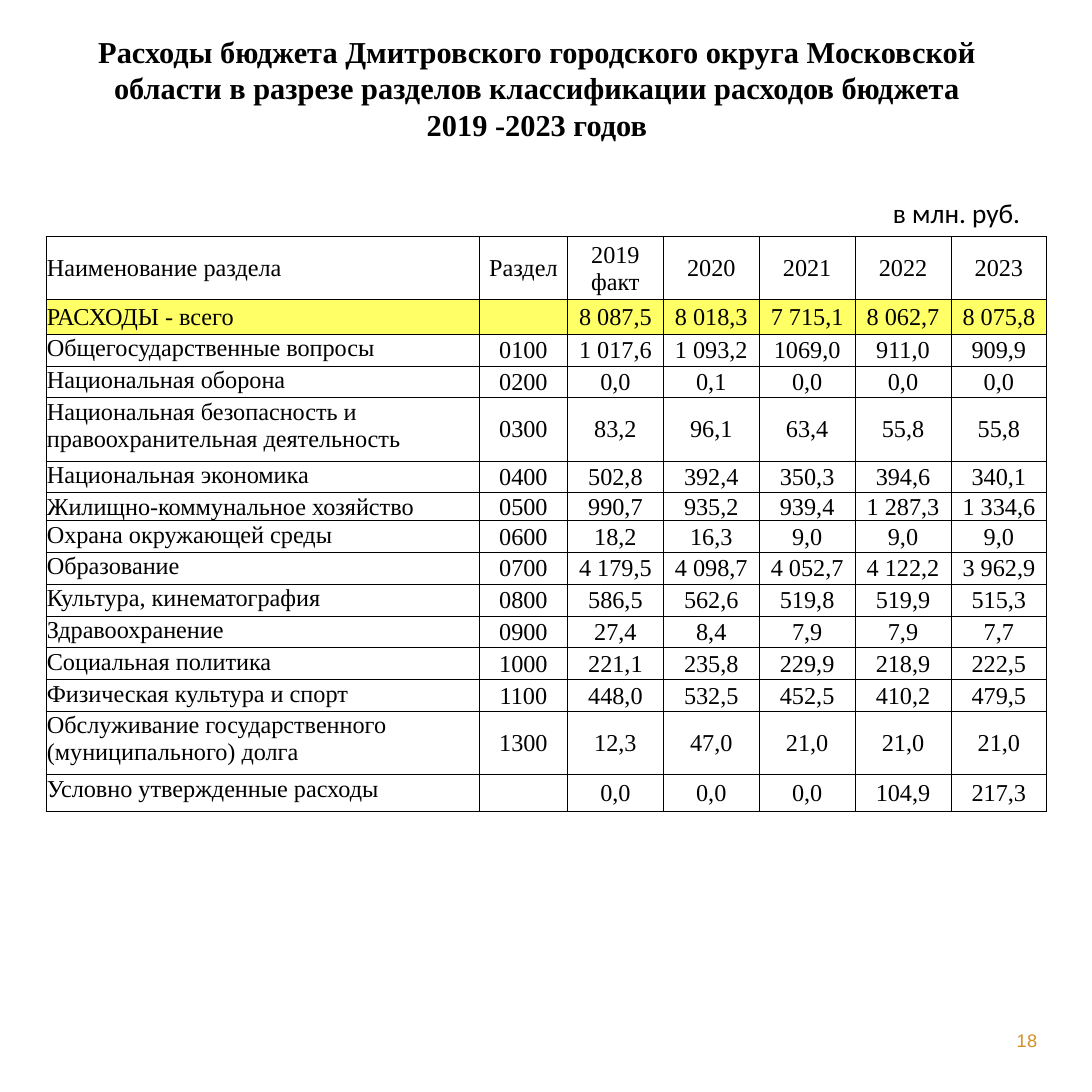
from lxml.etree import SubElement
from pptx import Presentation
from pptx.dml.color import RGBColor
from pptx.enum.text import MSO_ANCHOR as Anchor, MSO_AUTO_SIZE as AutoSize, PP_ALIGN as Align
from pptx.oxml.ns import qn
from pptx.util import Cm, Pt

BLACK = RGBColor(0x00, 0x00, 0x00)
YELLOW = RGBColor(0xFF, 0xFF, 0x66)
OCHRE = RGBColor(0xD2, 0x8E, 0x27)
SERIF = "Times New Roman"

TITLE_LINES = [
    "Расходы бюджета Дмитровского городского округа Московской области "
    "в разрезе разделов классификации расходов бюджета",
    "2019 -2023 годов",
]
COLUMN_WIDTHS = [10.08, 2.05] + [2.23] * 5
ROW_HEIGHT = 0.74
SPECIAL_HEIGHTS = {0: 1.47, 1: 0.8, 4: 1.47, 6: 0.62, 13: 1.47, 14: 0.86}
HEADER_ROW, TOTAL_ROW = 0, 1
EXPENSES = [
    ["Наименование раздела", "Раздел", "2019\nфакт", "2020", "2021", "2022", "2023"],
    ["РАСХОДЫ - всего", "", "8 087,5", "8 018,3", "7 715,1", "8 062,7", "8 075,8"],
    ["Общегосударственные вопросы", "0100", "1 017,6", "1 093,2", "1069,0", "911,0", "909,9"],
    ["Национальная оборона", "0200", "0,0", "0,1", "0,0", "0,0", "0,0"],
    ["Национальная безопасность и правоохранительная деятельность", "0300",
     "83,2", "96,1", "63,4", "55,8", "55,8"],
    ["Национальная экономика", "0400", "502,8", "392,4", "350,3", "394,6", "340,1"],
    ["Жилищно-коммунальное хозяйство", "0500", "990,7", "935,2", "939,4", "1 287,3", "1 334,6"],
    ["Охрана окружающей среды", "0600", "18,2", "16,3", "9,0", "9,0", "9,0"],
    ["Образование", "0700", "4 179,5", "4 098,7", "4 052,7", "4 122,2", "3 962,9"],
    ["Культура, кинематография", "0800", "586,5", "562,6", "519,8", "519,9", "515,3"],
    ["Здравоохранение", "0900", "27,4", "8,4", "7,9", "7,9", "7,7"],
    ["Социальная политика", "1000", "221,1", "235,8", "229,9", "218,9", "222,5"],
    ["Физическая культура и спорт", "1100", "448,0", "532,5", "452,5", "410,2", "479,5"],
    ["Обслуживание государственного (муниципального) долга", "1300",
     "12,3", "47,0", "21,0", "21,0", "21,0"],
    ["Условно утвержденные расходы", "", "0,0", "0,0", "0,0", "104,9", "217,3"],
]


def write_lines(text_frame, lines, font_name, size, color=BLACK, align=Align.LEFT, bold=False):
    """Put each line in its own paragraph and return the last run."""
    for index, line in enumerate(lines):
        paragraph = text_frame.add_paragraph() if index else text_frame.paragraphs[0]
        paragraph.alignment = align
        run = paragraph.add_run()
        run.text = line
        run.font.name = font_name
        run.font.size = Pt(size)
        run.font.bold = bold
        run.font.color.rgb = color
    return run


def add_title(slide, left, top, width, height):
    title = slide.shapes.title
    title.left, title.top, title.width, title.height = left, top, width, height
    text_frame = title.text_frame
    text_frame.word_wrap = True
    text_frame.auto_size = AutoSize.NONE
    text_frame.vertical_anchor = Anchor.TOP
    write_lines(text_frame, TITLE_LINES, SERIF, 20, align=Align.CENTER, bold=True)


def add_unit_note(slide, left, top, width, height):
    text_frame = slide.shapes.add_textbox(left, top, width, height).text_frame
    text_frame.word_wrap = True
    write_lines(text_frame, ["в млн. руб."], "Calibri", 18)


def add_page_number(slide, left, top, width, height):
    text_frame = slide.shapes.add_textbox(left, top, width, height).text_frame
    text_frame.word_wrap = True
    text_frame.vertical_anchor = Anchor.MIDDLE
    text_frame.margin_left = text_frame.margin_right = 0
    text_frame.margin_top = text_frame.margin_bottom = 0
    run = write_lines(text_frame, ["18"], "Arial", 12, OCHRE, Align.RIGHT)
    run.font._element.set("spc", "30")


def add_borders(cell):
    properties = cell._tc.get_or_add_tcPr()
    for side in ("a:lnL", "a:lnR", "a:lnT", "a:lnB"):
        line = SubElement(properties, qn(side), w=str(Pt(0.5)))
        fill = SubElement(line, qn("a:solidFill"))
        SubElement(fill, qn("a:srgbClr"), val=str(BLACK))


def fill_cell(cell, text, row, column):
    is_name = column == 0
    cell.margin_left = cell.margin_right = cell.margin_top = Cm(0.02)
    cell.margin_bottom = 0
    top_aligned = is_name and row not in (HEADER_ROW, TOTAL_ROW)
    cell.vertical_anchor = Anchor.TOP if top_aligned else Anchor.MIDDLE
    add_borders(cell)
    if row == TOTAL_ROW:
        cell.fill.solid()
        cell.fill.fore_color.rgb = YELLOW
    else:
        cell.fill.background()
    align = Align.LEFT if is_name else Align.CENTER
    write_lines(cell.text_frame, text.split("\n"), SERIF, 16, align=align)


def add_expense_table(slide, left, top):
    heights = [SPECIAL_HEIGHTS.get(row, ROW_HEIGHT) for row in range(len(EXPENSES))]
    table = slide.shapes.add_table(
        len(heights), len(COLUMN_WIDTHS), left, top, Cm(sum(COLUMN_WIDTHS)), Cm(sum(heights))
    ).table
    table.first_row = table.horz_banding = False
    for column, width in zip(table.columns, COLUMN_WIDTHS):
        column.width = Cm(width)
    for row, height in zip(table.rows, heights):
        row.height = Cm(height)
    for row, texts in enumerate(EXPENSES):
        for column, text in enumerate(texts):
            fill_cell(table.cell(row, column), text, row, column)


def main():
    presentation = Presentation()
    presentation.slide_width = presentation.slide_height = Cm(25.4)
    slide = presentation.slides.add_slide(presentation.slide_layouts[5])
    add_title(slide, Cm(1.48), Cm(0.64), Cm(22.02), Cm(2.82))
    add_expense_table(slide, Cm(1.07), Cm(5.5))
    add_unit_note(slide, Cm(20.52), Cm(4.45), Cm(4.8), Cm(1.02))
    add_page_number(slide, Cm(18.2), Cm(23.95), Cm(5.93), Cm(0.5))
    presentation.save("out.pptx")


if __name__ == "__main__":
    main()
